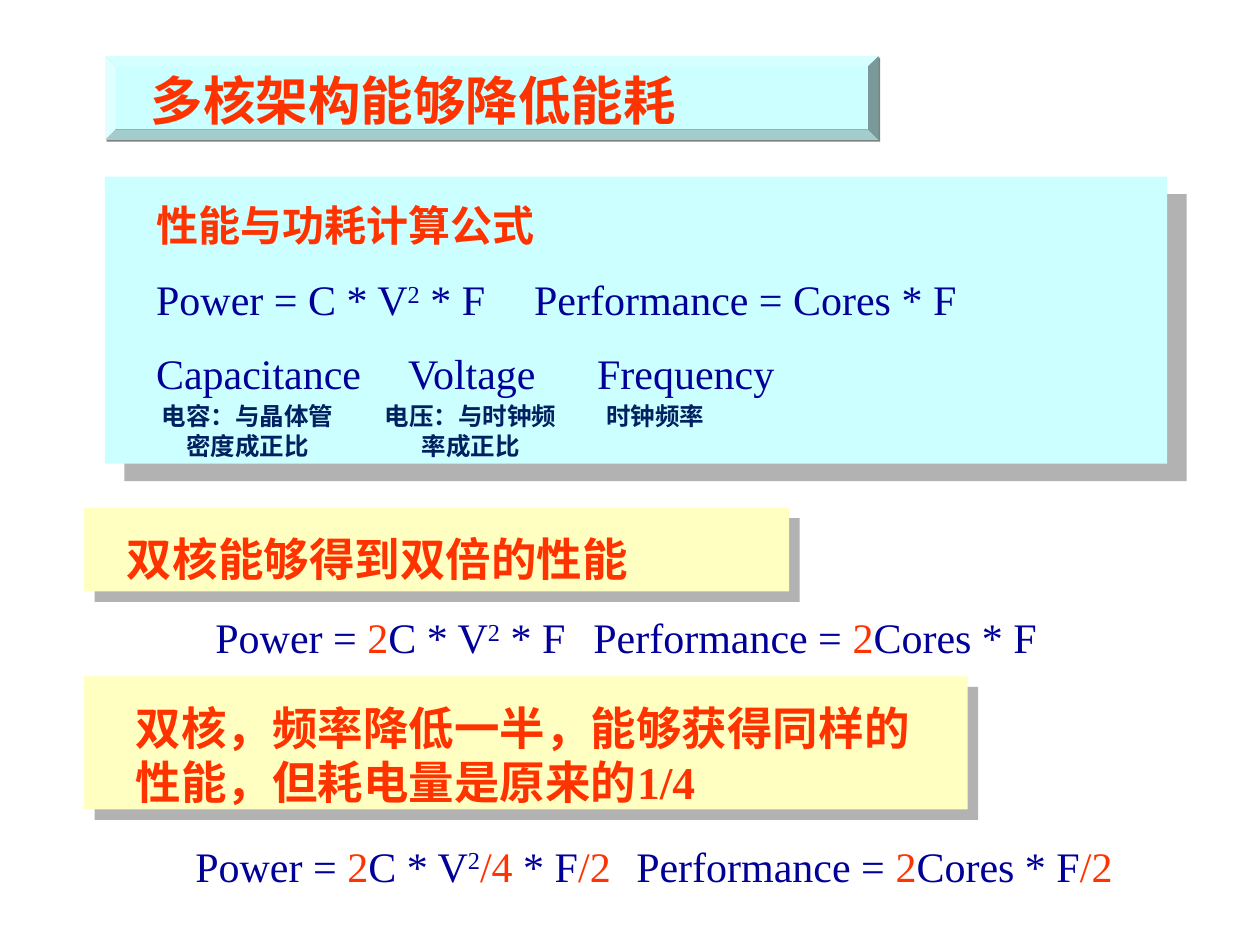
from lxml.etree import SubElement
from pptx import Presentation
from pptx.dml.color import RGBColor
from pptx.enum.shapes import MSO_SHAPE
from pptx.enum.text import MSO_ANCHOR, MSO_AUTO_SIZE, PP_ALIGN
from pptx.oxml.ns import qn
from pptx.util import Pt

CYAN = RGBColor(0xCC, 0xFF, 0xFF)
CREAM = RGBColor(0xFF, 0xFF, 0xC1)
WHITE = RGBColor(0xFF, 0xFF, 0xFF)
RED = RGBColor(0xFF, 0x33, 0x00)
BLUE = RGBColor(0x00, 0x00, 0x99)
NAVY = RGBColor(0x00, 0x20, 0x60)
GREY = RGBColor(0xB2, 0xB2, 0xB2)
DARK_GREY = RGBColor(0x80, 0x80, 0x80)
BLACK = RGBColor(0, 0, 0)

HAN_FONT = "Noto Sans CJK SC"
LATIN_FONT = "Times New Roman"
HAN_LEADING = 1.2

POWER_TAB = 288
TERM_TABS = (140.5, 243.5)


def add_shadow(properties, colour, distance, angle):
    effects = SubElement(properties, qn("a:effectLst"))
    shadow = SubElement(effects, qn("a:outerShdw"), dist=str(Pt(distance)),
                        dir=str(angle * 60000), algn="ctr", rotWithShape="0")
    SubElement(shadow, qn("a:srgbClr"), val=str(colour))


class SlideBuilder:
    def __init__(self, slide):
        self.slide = slide
        self.heading = {"size": Pt(26), "bold": True, "name": LATIN_FONT}
        self.formula_style = {"size": Pt(24), "bold": False, "name": LATIN_FONT}
        self.label = {"size": Pt(14), "bold": True, "name": HAN_FONT}

    def place(self, shape, left, top, width, height):
        for side, value in zip(("left", "top", "width", "height"),
                               (left, top, width, height)):
            setattr(shape, side, Pt(value))

    def panel(self, box, colour, shadow=None, kind=MSO_SHAPE.RECTANGLE):
        """Draw a filled shape; shadow is (colour, distance, angle)."""
        shape = self.slide.shapes.add_shape(kind, *map(Pt, box))
        shape.fill.solid()
        shape.fill.fore_color.rgb = colour
        shape.line.fill.background()
        if shadow:
            add_shadow(shape._element.spPr, *shadow)
        else:
            shape.shadow.inherit = False
        return shape

    def frame(self, shape, margin_top=6):
        layout = {"word_wrap": True, "auto_size": MSO_AUTO_SIZE.NONE,
                  "vertical_anchor": MSO_ANCHOR.TOP, "margin_top": Pt(margin_top)}
        for name, value in layout.items():
            setattr(shape.text_frame, name, value)
        return shape.text_frame

    def run(self, paragraph, text, style, colour, raised=False):
        run = paragraph.add_run()
        run.text = text
        for name, value in style.items():
            setattr(run.font, name, value)
        run.font.color.rgb = colour
        properties = run._r.get_or_add_rPr()
        if raised:
            properties.set("baseline", "30000")
        latin = properties.find(qn("a:latin"))
        east_asian = SubElement(properties, qn("a:ea"), typeface=HAN_FONT)
        latin.addnext(east_asian)
        return run

    def arrange(self, paragraph, align=PP_ALIGN.LEFT, before=0, leading=None, tabs=()):
        """Set alignment and spacing, without a bullet."""
        paragraph.alignment = align
        paragraph.space_before = Pt(before)
        paragraph.line_spacing = Pt(leading) if leading else 1.0
        properties = paragraph._p.get_or_add_pPr()
        properties.set("marL", "0")
        properties.set("indent", "0")
        SubElement(properties, qn("a:buNone"))
        if tabs:
            stops = SubElement(properties, qn("a:tabLst"))
            for position in tabs:
                SubElement(stops, qn("a:tab"), pos=str(Pt(position)), algn="l")

    def han_line(self, paragraph, text, style, colour, align=PP_ALIGN.LEFT):
        leading = round(style["size"].pt * HAN_LEADING)
        self.arrange(paragraph, align, leading=leading)
        return self.run(paragraph, text, style, colour)

    def formula(self, paragraph, parts, before=0, tabs=(POWER_TAB,)):
        """Write parts; a leading ! marks red and a leading ^ a superscript."""
        self.arrange(paragraph, before=before, tabs=tabs)
        for part in parts:
            self.run(paragraph, part.lstrip("!^"), self.formula_style,
                     RED if part[0] == "!" else BLUE, part[0] == "^")

    def formula_box(self, box, parts):
        self.formula(self.frame(self.panel(box, WHITE)).paragraphs[0], parts)

    def textbox(self, box, text, style, colour, align=PP_ALIGN.LEFT, margin_top=6):
        shape = self.slide.shapes.add_textbox(*map(Pt, box))
        frame = self.frame(shape, margin_top)
        self.han_line(frame.paragraphs[0], text, style, colour, align)

    def claim(self, box, text_box, text):
        self.panel(box, CREAM, (GREY, 8.5, 45))
        self.textbox(text_box, text, self.heading, RED)

    def raise_placeholder(self, placeholder, box):
        """Bring a placeholder to the front and put it in its box."""
        element = placeholder._element
        element.getparent().append(element)
        self.place(placeholder, *box)
        return self.frame(placeholder)

    def title(self, text):
        self.panel((60, 32, 442, 48), CYAN, (DARK_GREY, 1.4, 45), MSO_SHAPE.BEVEL)
        frame = self.raise_placeholder(self.slide.shapes.title, (79, 33, 413, 44))
        style = {**self.heading, "size": Pt(30)}
        title_run = self.han_line(frame.paragraphs[0], text, style, RED)
        properties = title_run._r.get_or_add_rPr()
        add_shadow(properties, BLACK, 2, 45)
        properties.find(qn("a:solidFill")).addnext(properties.find(qn("a:effectLst")))

    def definitions(self, heading, formula, terms):
        self.panel((60, 101, 607, 164), CYAN, (GREY, 14.9, 42))
        frame = self.raise_placeholder(self.slide.placeholders[1], (82, 108, 547, 124))
        style = {**self.heading, "size": Pt(24), "name": HAN_FONT}
        self.han_line(frame.paragraphs[0], heading, style, RED)
        self.formula(frame.add_paragraph(), formula, before=13.5)
        self.formula(frame.add_paragraph(), ["\t".join(terms)], before=13.5, tabs=TERM_TABS)


def main():
    deck = Presentation()
    deck.slide_width, deck.slide_height = Pt(720), Pt(540)
    builder = SlideBuilder(deck.slides.add_slide(deck.slide_layouts[1]))

    builder.title("多核架构能够降低能耗")
    builder.definitions("性能与功耗计算公式",
                        ["Power = C * V", "^2", " * F\tPerformance = Cores * F"],
                        ["Capacitance", "Voltage", "Frequency"])
    for left, width, meaning in ((82, 119, "电容：与晶体管密度成正比"),
                                 (212, 114, "电压：与时钟频率成正比"),
                                 (326, 97, "时钟频率")):
        builder.textbox((left, 225, width, 41), meaning, builder.label, NAVY,
                        PP_ALIGN.CENTER, margin_top=4)

    builder.formula_box((116, 343.5, 582, 36),
                        ["Power = ", "!2", "C * V", "^2", " * F\tPerformance = ",
                         "!2", "Cores * F"])
    builder.claim((48, 290, 403, 48), (65.5, 297.5, 385, 39), "双核能够得到双倍的性能")
    builder.claim((48, 386.5, 505, 76), (70.5, 394, 480, 101),
                  "双核，频率降低一半，能够获得同样的性能，但耗电量是原来的1/4")
    builder.formula_box((104.5, 474, 624, 36),
                        ["Power = ", "!2", "C * V", "^2", "!/4", " * F", "!/2",
                         "\tPerformance = ", "!2", "Cores * F", "!/2"])
    deck.save("out.pptx")


if __name__ == "__main__":
    main()
